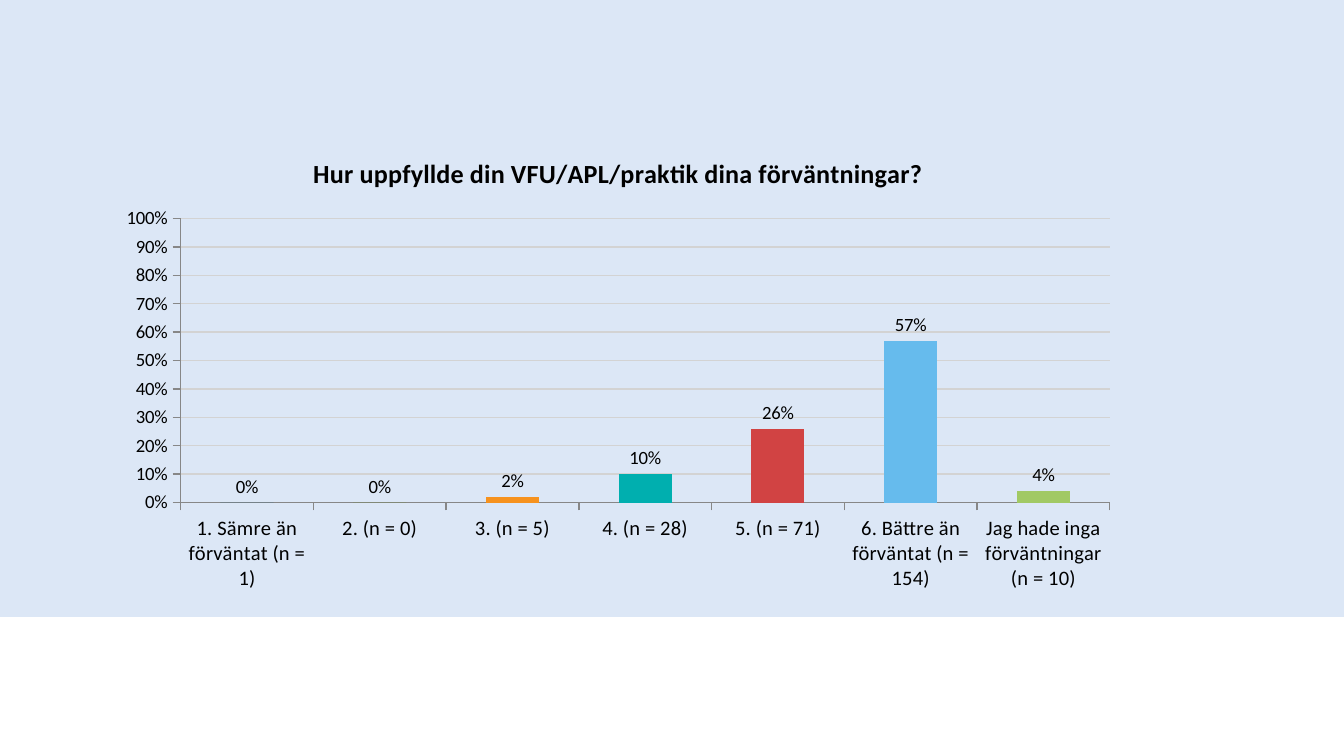
from dataclasses import dataclass

from pptx import Presentation
from pptx.chart.axis import CategoryAxis, ValueAxis
from pptx.chart.chart import Chart
from pptx.chart.data import CategoryChartData
from pptx.dml.color import RGBColor
from pptx.enum.chart import XL_CHART_TYPE as ChartType
from pptx.enum.chart import XL_LABEL_POSITION as LabelPos
from pptx.enum.chart import XL_TICK_MARK as TickMark
from pptx.enum.shapes import MSO_SHAPE as Shape
from pptx.slide import Slide
from pptx.text.text import Font
from pptx.util import Inches, Pt


@dataclass(frozen=True)
class Theme:
    font: str = "Calibri"
    text: str = "000000"
    panel: str = "DCE7F6"
    grid: str = "D3D3D3"
    axis: str = "878787"
    series: str = "006699"
    title_size: int = 14
    category_size: int = 11
    value_size: int = 10
    base_size: int = 18


@dataclass(frozen=True)
class Answer:
    label: str
    share: float
    color: str


THEME = Theme()
QUESTION = "Hur uppfyllde din VFU/APL/praktik dina förväntningar?"
ANSWERS = [
    Answer("1. Sämre än förväntat (n = 1)", 0, "006699"),
    Answer("2. (n = 0)", 0, "649E0B"),
    Answer("3. (n = 5)", 0.02, "F6921E"),
    Answer("4. (n = 28)", 0.1, "00AFAF"),
    Answer("5. (n = 71)", 0.26, "D14343"),
    Answer("6. Bättre än förväntat (n = 154)", 0.57, "66BBED"),
    Answer("Jag hade inga förväntningar (n = 10)", 0.04, "A1C964"),
]


def rgb(color: str) -> RGBColor:
    return RGBColor.from_string(color)


def style_font(font: Font, size: int, bold: bool = False) -> None:
    font.name = THEME.font
    font.size = Pt(size)
    font.bold = bold
    font.color.rgb = rgb(THEME.text)


def style_axis(axis: CategoryAxis | ValueAxis, size: int) -> None:
    axis.major_tick_mark = TickMark.OUTSIDE
    axis.minor_tick_mark = TickMark.NONE
    axis.format.line.color.rgb = rgb(THEME.axis)
    axis.format.line.width = Pt(0.75)
    style_font(axis.tick_labels.font, size)


def add_panel(s: Slide, width: float, height: float) -> None:
    sp = s.shapes.add_shape(Shape.RECTANGLE, 0, 0, Inches(width), Inches(height))
    sp.shadow.inherit = False
    sp.fill.solid()
    sp.fill.fore_color.rgb = rgb(THEME.panel)
    sp.line.fill.background()


def style_columns(chart: Chart, answers: list[Answer]) -> None:
    plot = chart.plots[0]
    plot.gap_width = 150
    plot.vary_by_categories = False
    plot.has_data_labels = True
    labels = plot.data_labels
    labels.show_value = True
    labels.position = LabelPos.OUTSIDE_END
    labels.number_format = "0%"
    labels.number_format_is_linked = False
    style_font(labels.font, THEME.value_size)
    series = plot.series[0]
    series.invert_if_negative = False
    series.format.fill.solid()
    series.format.fill.fore_color.rgb = rgb(THEME.series)
    for i, answer in enumerate(answers):
        fill = series.points[i].format.fill
        fill.solid()
        fill.fore_color.rgb = rgb(answer.color)


def add_answer_chart(s: Slide, question: str, answers: list[Answer]) -> None:
    data = CategoryChartData(number_format="0%")
    data.categories = [a.label for a in answers]
    data.add_series("Series 1", [a.share for a in answers])
    chart = s.shapes.add_chart(
        ChartType.COLUMN_CLUSTERED,
        Inches(0.79), Inches(1), Inches(7.62), Inches(3.47), data,
    ).chart
    style_font(chart.font, THEME.base_size)
    chart.has_legend = False
    chart.has_title = True
    tf = chart.chart_title.text_frame
    tf.text = question
    style_font(tf.paragraphs[0].runs[0].font, THEME.title_size, bold=True)
    chart.chart_title.include_in_layout = False

    style_axis(chart.category_axis, THEME.category_size)
    axis = chart.value_axis
    style_axis(axis, THEME.value_size)
    axis.minimum_scale = 0
    axis.maximum_scale = 1
    axis.major_unit = 0.1
    axis.tick_labels.number_format = "0%"
    axis.tick_labels.number_format_is_linked = False
    axis.has_major_gridlines = True
    axis.major_gridlines.format.line.color.rgb = rgb(THEME.grid)
    axis.major_gridlines.format.line.width = Pt(0.75)
    style_columns(chart, answers)


def main() -> None:
    prs = Presentation()
    prs.slide_width = Inches(10)
    prs.slide_height = prs.slide_width * 9 // 16
    s = prs.slides.add_slide(prs.slide_layouts[6])
    add_panel(s, 10, 4.59)
    add_answer_chart(s, QUESTION, ANSWERS)
    prs.save("out.pptx")


if __name__ == "__main__":
    main()
